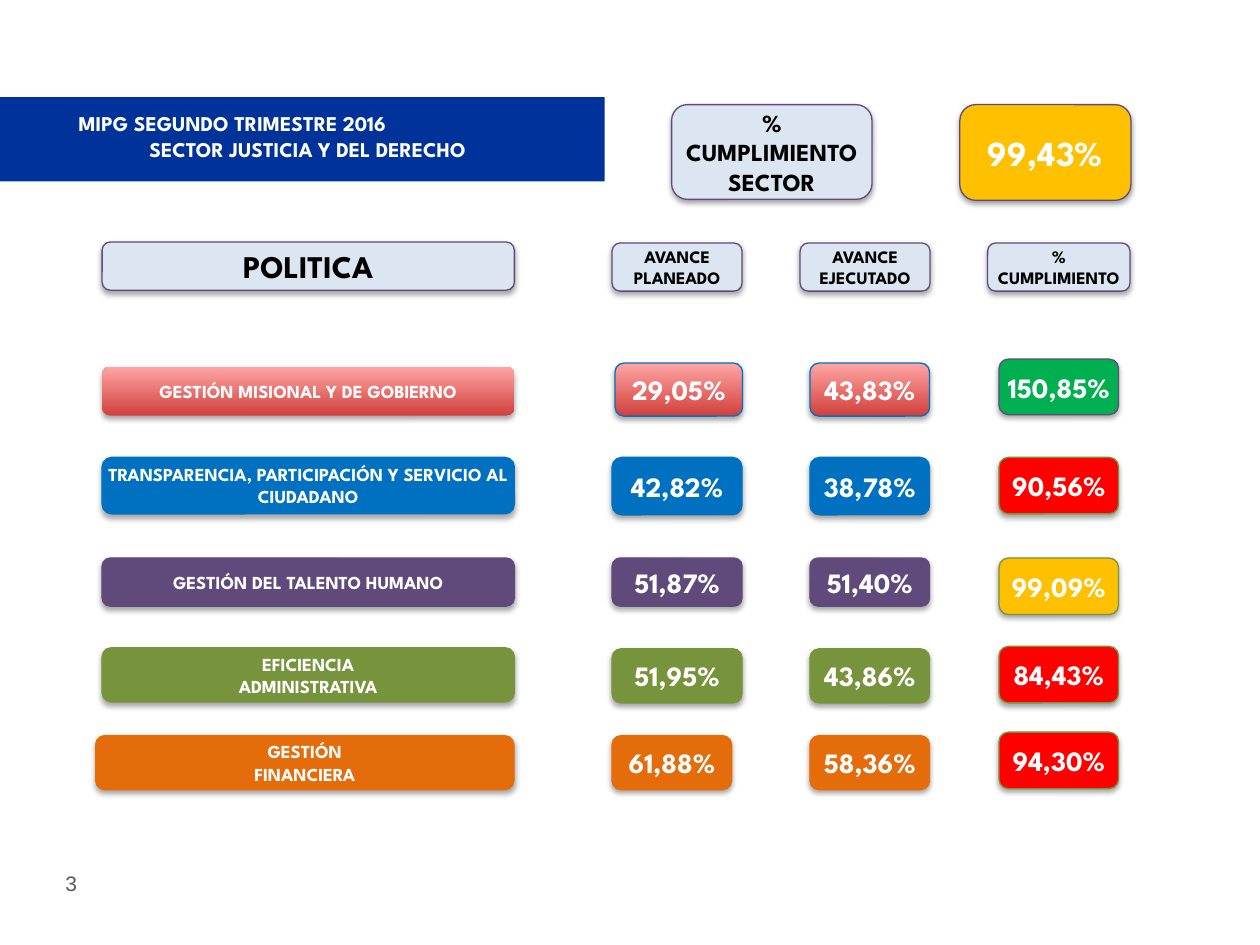
import lxml.etree
import pptx
import pptx.dml.color
import pptx.enum.shapes
import pptx.enum.text
import pptx.oxml
import pptx.oxml.ns
import pptx.util

Cm = pptx.util.Cm
Pt = pptx.util.Pt
ALIGN = pptx.enum.text.PP_ALIGN
ANCHOR = pptx.enum.text.MSO_ANCHOR
SHAPE = pptx.enum.shapes.MSO_SHAPE

COLORS = {
    "navy": "003399", "white": "FFFFFF", "black": "000000", "gray": "595959",
    "pale": "DCE6F2", "blue": "0070C0", "purple": "604A7B", "olive": "77933C",
    "orange": "E46C0A", "green": "00B050", "red": "FF0000", "amber": "FFC000",
    "coral_dark": "D1403C", "coral_light": "FFA6A5",
}
CORAL = ("coral_dark", "coral_light")  # gradient, bottom to top
FONT = "League Spartan"

TITLE_LINES = ["MIPG SEGUNDO TRIMESTRE 2016", "SECTOR JUSTICIA Y DEL DERECHO"]

# text, (left, top, width, height) in cm, size, fill, text colour
HEADERS = [
    ("POLITICA", (2.06, 4.88, 8.31, 0.97), 18, "pale", "black"),
    ("AVANCE PLANEADO", (12.34, 4.9, 2.62, 0.97), 10, "pale", "black"),
    ("AVANCE EJECUTADO", (16.13, 4.9, 2.62, 0.97), 10, "pale", "black"),
    ("% CUMPLIMIENTO", (19.91, 4.9, 2.87, 0.97), 10, "pale", "black"),
    ("% CUMPLIMIENTO SECTOR", (13.54, 2.11, 4.04, 1.91), 14, "pale", "black"),
    ("99,43%", (19.35, 2.11, 3.45, 1.93), 20, "amber", "white"),
]

# policy, planned, executed, compliance, row fill, compliance fill
POLICIES = [
    ("GESTIÓN MISIONAL Y DE GOBIERNO", "29,05%", "43,83%", "150,85%", CORAL, "green"),
    ("TRANSPARENCIA, PARTICIPACIÓN Y SERVICIO AL CIUDADANO",
     "42,82%", "38,78%", "90,56%", "blue", "red"),
    ("GESTIÓN DEL TALENTO HUMANO", "51,87%", "51,40%", "99,09%", "purple", "amber"),
    ("EFICIENCIA\nADMINISTRATIVA", "51,95%", "43,86%", "84,43%", "olive", "red"),
    ("GESTIÓN\nFINANCIERA", "61,88%", "58,36%", "94,30%", "orange", "red"),
]

# (top, height) in cm of each row: policy, progress and compliance boxes
ROWS = [
    ((7.39, 0.99), (7.32, 1.07), (7.24, 1.12)),
    ((9.22, 1.14), (9.22, 1.16), (9.22, 1.14)),
    ((11.25, 0.97), (11.25, 0.97), (11.25, 1.14)),
    ((13.06, 1.09), (13.08, 1.09), (13.03, 1.14)),
    ((14.83, 1.09), (14.83, 1.09), (14.76, 1.14)),
]
# (left, width) in cm: policy, planned, executed, compliance
COLUMNS = [(2.06, 8.31), (12.34, 2.62), (16.33, 2.41), (20.14, 2.41)]
# boxes off the grid, by (row, column)
COLUMN_EXCEPTIONS = {(0, 1): (12.4, 2.57), (4, 0): (1.93, 8.43), (4, 1): (12.34, 2.41)}

SHADOW = (
    '<a:effectLst %s><a:outerShdw blurRad="40000" dist="23000" dir="5400000" rotWithShape="0">'
    '<a:srgbClr val="000000"><a:alpha val="35000"/></a:srgbClr></a:outerShdw></a:effectLst>'
    % pptx.oxml.ns.nsdecls("a")
)


def color(name):
    return pptx.dml.color.RGBColor.from_string(COLORS[name])


def set_font(para, size, color_name, name=FONT, bold=True):
    for key, value in {"name": name, "size": Pt(size), "bold": bold}.items():
        setattr(para.font, key, value)
    para.font.color.rgb = color(color_name)


def set_frame(frame, anchor, margin=None):
    frame.word_wrap = True
    frame.vertical_anchor = anchor
    if margin is not None:
        for side in ("left", "top", "right", "bottom"):
            setattr(frame, f"margin_{side}", margin)


def paint(shape, fill):
    """Fill with one named colour, or with a vertical gradient of two."""
    if isinstance(fill, str):
        shape.fill.solid()
        shape.fill.fore_color.rgb = color(fill)
        return
    shape.fill.gradient()
    shape.fill.gradient_angle = 90
    for stop, name in zip(shape.fill.gradient_stops, fill):
        stop.color.rgb = color(name)


def add_box(page, text, place, size, fill, text_color="white", line="purple"):
    box = page.shapes.add_shape(SHAPE.ROUNDED_RECTANGLE, *map(Cm, place))
    paint(box, fill)
    if line:
        box.line.color.rgb = color(line)
        box.line.width = Pt(0.75)
    else:
        box.line.fill.background()
    box.element.spPr.append(pptx.oxml.parse_xml(SHADOW))
    set_frame(box.text_frame, ANCHOR.MIDDLE, 0)
    box.text_frame.text = text
    for para in box.text_frame.paragraphs:
        para.alignment = ALIGN.CENTER
        set_font(para, size, text_color)


def add_title(page):
    title = page.shapes.title
    banner = page.shapes.add_shape(SHAPE.RECTANGLE, 0, Cm(1.96), Cm(12.19), Cm(1.7))
    banner.shadow.inherit = False
    paint(banner, "navy")
    banner.line.fill.background()
    title.element.addprevious(banner.element)
    for key, value in {"left": 0.64, "top": 2.11, "width": 10.44, "height": 1.22}.items():
        setattr(title, key, Cm(value))
    set_frame(title.text_frame, ANCHOR.TOP)
    title.text_frame.text = "\n".join(TITLE_LINES)
    first, second = title.text_frame.paragraphs
    first.alignment, second.alignment = ALIGN.LEFT, ALIGN.CENTER
    properties = first._p.get_or_add_pPr()
    properties.set("marL", str(Cm(0.69)))
    properties.set("indent", "0")
    for para in (first, second):
        para.space_before = Pt(0)
        set_font(para, 12, "white")


def add_policy(page, row):
    *texts, fill, result_fill = POLICIES[row]
    policy_span, progress_span, result_span = ROWS[row]
    spans = [policy_span, progress_span, progress_span, result_span]
    for column, (text, (top, height)) in enumerate(zip(texts, spans)):
        left, width = COLUMN_EXCEPTIONS.get((row, column), COLUMNS[column])
        line = "blue" if fill == CORAL else fill
        if column == 0 and fill == CORAL:
            line = None
        if column == 3:
            line = "purple" if row == 0 else "olive"
        add_box(page, text, (left, top, width, height), 16 if column else 10.5,
                result_fill if column == 3 else fill, line=line)


def add_page_number(page):
    box = page.shapes.add_textbox(Cm(1.07), Cm(17.42), Cm(1.9), Cm(0.76))
    set_frame(box.text_frame, ANCHOR.TOP)
    box.text_frame.text = "3"
    set_font(box.text_frame.paragraphs[0], 12, "gray", "Arial", False)


def main():
    deck = pptx.Presentation()
    deck.slide_width, deck.slide_height = Cm(25.4), Cm(19.05)
    page = deck.slides.add_slide(deck.slide_layouts[5])
    add_title(page)
    for header in HEADERS:
        add_box(page, *header)
    for row in range(len(POLICIES)):
        add_policy(page, row)
    add_page_number(page)
    deck.save("out.pptx")


if __name__ == "__main__":
    main()
